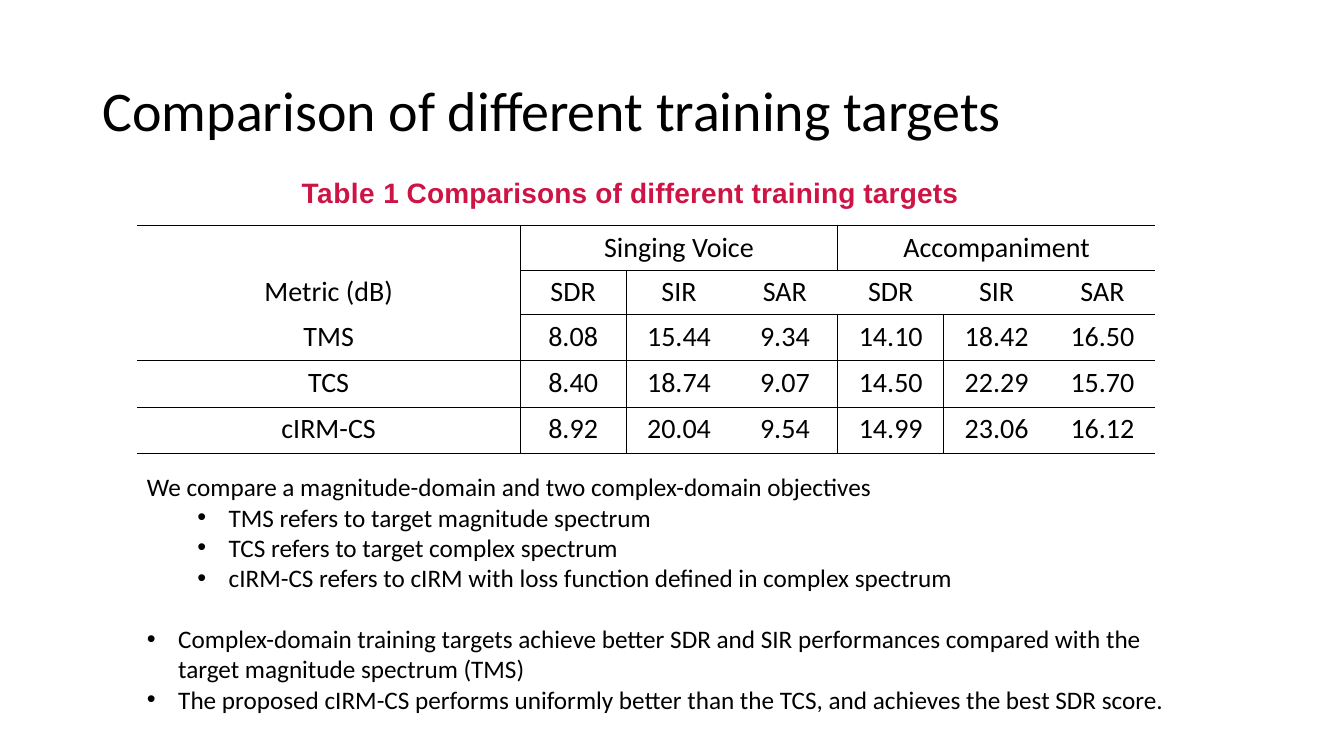
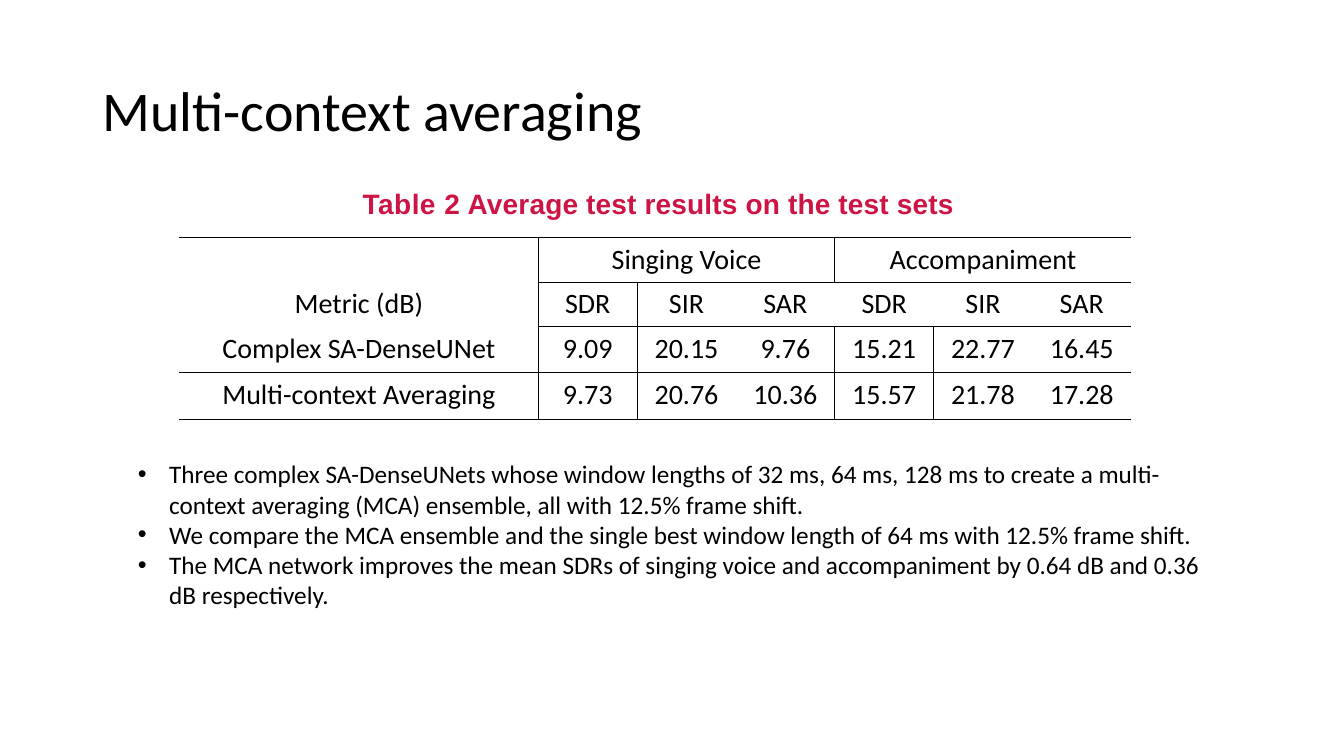
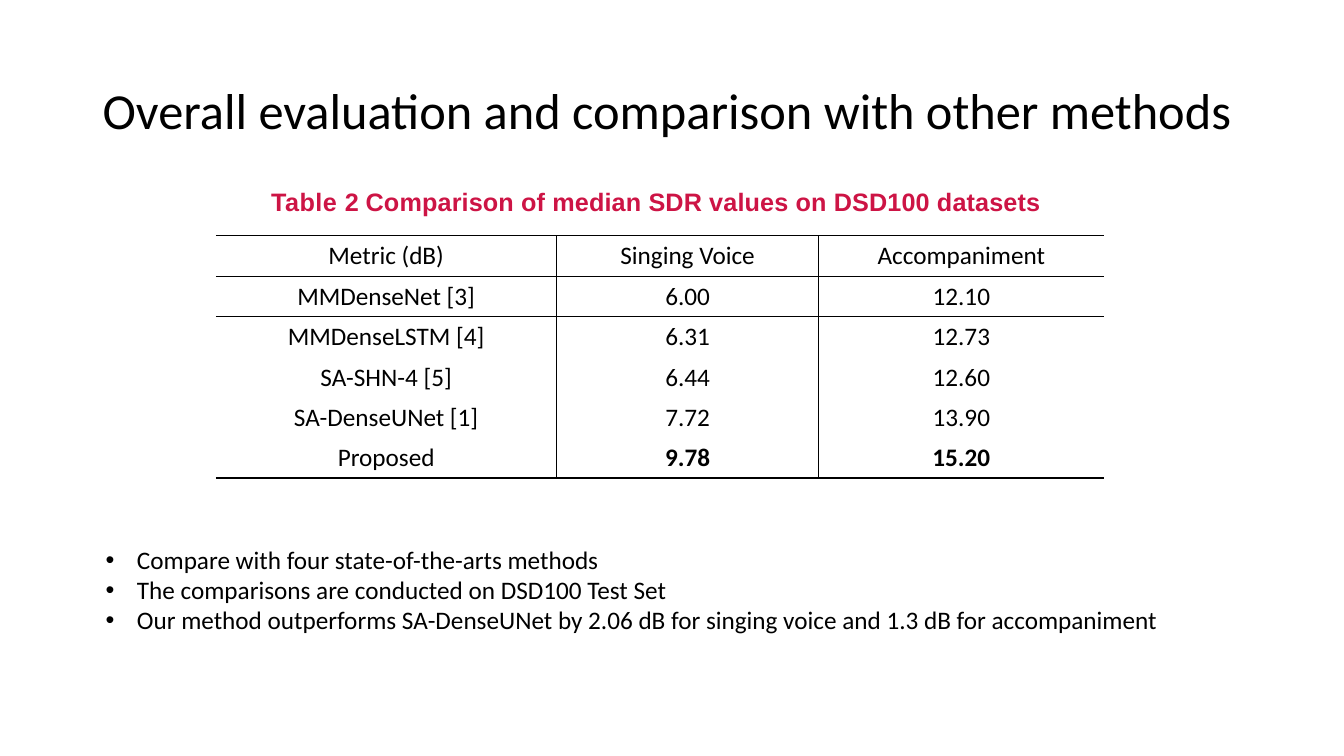
"""Build three result slides, each with a title, a captioned table and notes on it."""
from lxml import etree
from pptx import Presentation
from pptx.dml.color import RGBColor
from pptx.enum.text import MSO_ANCHOR, PP_ALIGN
from pptx.oxml.ns import qn
from pptx.util import Inches, Pt

BLACK, RED = "000000", "CD1445"
BODY_FONT, CAPTION_FONT = "Calibri", "Arial"
NO_GRID_STYLE = "{2D5ABB26-0587-4C30-8999-92F81FD0307C}"
SIDES = ("lnL", "lnR", "lnT", "lnB")
BULLET, SUB_BULLET = 0.31, 0.81
GROUP_HEADS = [
    ["", "Singing Voice", "", "", "Accompaniment", "", ""],
    ["Metric (dB)"] + ["SDR", "SIR", "SAR"] * 2,
]

SLIDES = [
    {
        "title": "Comparison of different training targets", "title_size": 40,
        "caption": ("1 ", "Comparisons of different training targets"),
        "caption_at": (0.99, 1.74, 10.49, 0.34),
        "size": 20, "grouped": True, "table_at": (1.36, 2.24),
        "cols": [3.8] + [1.05] * 6, "row_heights": [0.44] * 2 + [0.46] * 3,
        "rows": GROUP_HEADS + [
            ["TMS", "8.08", "15.44", "9.34", "14.10", "18.42", "16.50"],
            ["TCS", "8.40", "18.74", "9.07", "14.50", "22.29", "15.70"],
            ["cIRM-CS", "8.92", "20.04", "9.54", "14.99", "23.06", "16.12"],
        ],
        "body_at": (1.36, 4.63, 10.5, 2.52),
        "body": [
            ("We compare a magnitude-domain and two complex-domain objectives", 0, 0),
            ("TMS refers to target magnitude spectrum", SUB_BULLET, 0),
            ("TCS refers to target complex spectrum", SUB_BULLET, 0),
            ("cIRM-CS refers to cIRM with loss function defined in complex spectrum", SUB_BULLET, 0),
            ("Complex-domain training targets achieve better SDR and SIR performances "
             "compared with the target magnitude spectrum (TMS)", BULLET, 22),
            ("The proposed cIRM-CS performs uniformly better than the TCS, "
             "and achieves the best SDR score.", BULLET, 0),
        ],
    },
    {
        "title": "Multi-context averaging", "title_size": 40,
        "caption": ("2 ", "Average test results on the test sets"),
        "caption_at": (1.27, 1.85, 10.49, 0.34),
        "size": 20, "grouped": True, "table_at": (1.78, 2.36),
        "cols": [3.56] + [0.98] * 6, "row_heights": [0.44] * 2 + [0.46] * 2,
        "rows": GROUP_HEADS + [
            ["Complex SA-DenseUNet", "9.09", "20.15", "9.76", "15.21", "22.77", "16.45"],
            ["Multi-context Averaging", "9.73", "20.76", "10.36", "15.57", "21.78", "17.28"],
        ],
        "body_at": (1.27, 4.5, 11.01, 2.52),
        "body": [
            ("Three complex SA-DenseUNets whose window lengths of 32 ms, 64 ms, 128 ms to create "
             "a multi-context averaging (MCA) ensemble, all with 12.5% frame shift.", BULLET, 0),
            ("We compare the MCA ensemble and the single best window length of 64 ms "
             "with 12.5% frame shift.", BULLET, 0),
            ("The MCA network improves the mean SDRs of singing voice and accompaniment "
             "by 0.64 dB and 0.36 dB respectively.", BULLET, 0),
        ],
    },
    {
        "title": "Overall evaluation and comparison with other methods", "title_size": 36,
        "caption": ("2 ", "Comparison of median SDR values on DSD100 datasets"),
        "caption_at": (1.35, 1.85, 10.29, 0.3),
        "size": 18, "grouped": False, "table_at": (2.14, 2.34),
        "cols": [3.38, 2.6, 2.83], "row_heights": [0.4] * 6,
        "rows": [
            ["Metric (dB)", "Singing Voice", "Accompaniment"],
            ["MMDenseNet [3]", "6.00", "12.10"],
            ["MMDenseLSTM [4]", "6.31", "12.73"],
            ["SA-SHN-4 [5]", "6.44", "12.60"],
            ["SA-DenseUNet [1]", "7.72", "13.90"],
            ["Proposed", "9.78", "15.20"],
        ],
        "body_at": (0.95, 5.35, 11.18, 1.01),
        "body": [
            ("Compare with four state-of-the-arts methods", BULLET, 0),
            ("The comparisons are conducted on DSD100 Test Set", BULLET, 0),
            ("Our method outperforms SA-DenseUNet by 2.06 dB for singing voice "
             "and 1.3 dB for accompaniment", BULLET, 0),
        ],
    },
]


def rgb(value):
    return RGBColor.from_string(value)


def set_font(p, size, name=BODY_FONT, color=BLACK, bold=False):
    p.font.size, p.font.name, p.font.bold = Pt(size), name, bold
    p.font.color.rgb = rgb(color)


def add_text_frame(s, at):
    tf = s.shapes.add_textbox(*map(Inches, at)).text_frame
    tf.word_wrap = True
    return tf


def add_title(s, text, size):
    tf = add_text_frame(s, (0.92, 0.4, 11.5, 1.45))
    tf.vertical_anchor = MSO_ANCHOR.MIDDLE
    p = tf.paragraphs[0]
    p.text, p.line_spacing = text, 0.9
    set_font(p, size)


def add_caption(s, at, number, text, size):
    tf = add_text_frame(s, at)
    tf.margin_left = tf.margin_right = tf.margin_top = tf.margin_bottom = 0
    p = tf.paragraphs[0]
    p.alignment = PP_ALIGN.CENTER
    p._p.get_or_add_pPr().set("marL", str(Inches(0.03)))
    set_font(p, size, CAPTION_FONT, RED, True)
    for part, spacing in (("Table ", 30), (number, -10), (text, 10)):
        r = p.add_run()
        r.text = part
        r.font._element.set("spc", str(spacing))


def add_body(s, at, items):
    tf = add_text_frame(s, at)
    for i, (text, indent, gap) in enumerate(items):
        p = tf.add_paragraph() if i else tf.paragraphs[0]
        p.text, p.space_before = text, Pt(gap)
        set_font(p, 18)
        if indent:
            pPr = p._p.get_or_add_pPr()
            pPr.set("marL", str(Inches(indent)))
            pPr.set("indent", str(-Inches(BULLET)))
            font = etree.Element(qn("a:buFont"), typeface="Arial")
            bullet = etree.Element(qn("a:buChar"), char="•")
            pPr.find(qn("a:defRPr")).addprevious(font)
            font.addnext(bullet)


def has_row_line(edge, col, n_rows, grouped):
    """Tell whether a horizontal rule lies on this row edge in this column."""
    if grouped:
        return edge not in (1, 2) or col > 0
    return edge in (0, 1, n_rows)


def has_col_line(edge, row, grouped):
    """Tell whether a vertical rule lies on this column edge in this row."""
    if grouped:
        return edge == 1 or (edge == 4 and row != 1)
    return edge in (1, 2)


def add_border(cell, side):
    ln = etree.SubElement(cell._tc.get_or_add_tcPr(), qn("a:" + side), w=str(Pt(1)))
    fill = etree.SubElement(ln, qn("a:solidFill"))
    etree.SubElement(fill, qn("a:srgbClr"), val=BLACK)


def add_results_table(s, at, cols, heights, rows, size, grouped):
    n_rows, n_cols = len(rows), len(cols)
    box = (*at, sum(cols), sum(heights))
    table = s.shapes.add_table(n_rows, n_cols, *map(Inches, box)).table
    table.first_row = table.horz_banding = False
    table._tbl.tblPr.find(qn("a:tableStyleId")).text = NO_GRID_STYLE
    for column, width in zip(table.columns, cols):
        column.width = Inches(width)
    for row, height in zip(table.rows, heights):
        row.height = Inches(height)
    for i, values in enumerate(rows):
        for j, value in enumerate(values):
            cell = table.cell(i, j)
            lines = (has_col_line(j, i, grouped), has_col_line(j + 1, i, grouped),
                     has_row_line(i, j, n_rows, grouped), has_row_line(i + 1, j, n_rows, grouped))
            for side, drawn in zip(SIDES, lines):
                if drawn:
                    add_border(cell, side)
            cell.fill.background()
            p = cell.text_frame.paragraphs[0]
            p.text, p.alignment = value, PP_ALIGN.CENTER
            set_font(p, size, bold=value in ("9.78", "15.20"))
    if grouped:
        for first in (1, 4):
            table.cell(0, first).merge(table.cell(0, first + 2))


def main():
    prs = Presentation()
    prs.slide_width, prs.slide_height = Inches(13.33), Inches(7.5)
    for d in SLIDES:
        s = prs.slides.add_slide(prs.slide_layouts[6])
        add_title(s, d["title"], d["title_size"])
        add_results_table(s, d["table_at"], d["cols"], d["row_heights"], d["rows"],
                          d["size"], d["grouped"])
        add_caption(s, d["caption_at"], *d["caption"], d["size"])
        add_body(s, d["body_at"], d["body"])
    prs.save("out.pptx")


if __name__ == "__main__":
    main()
